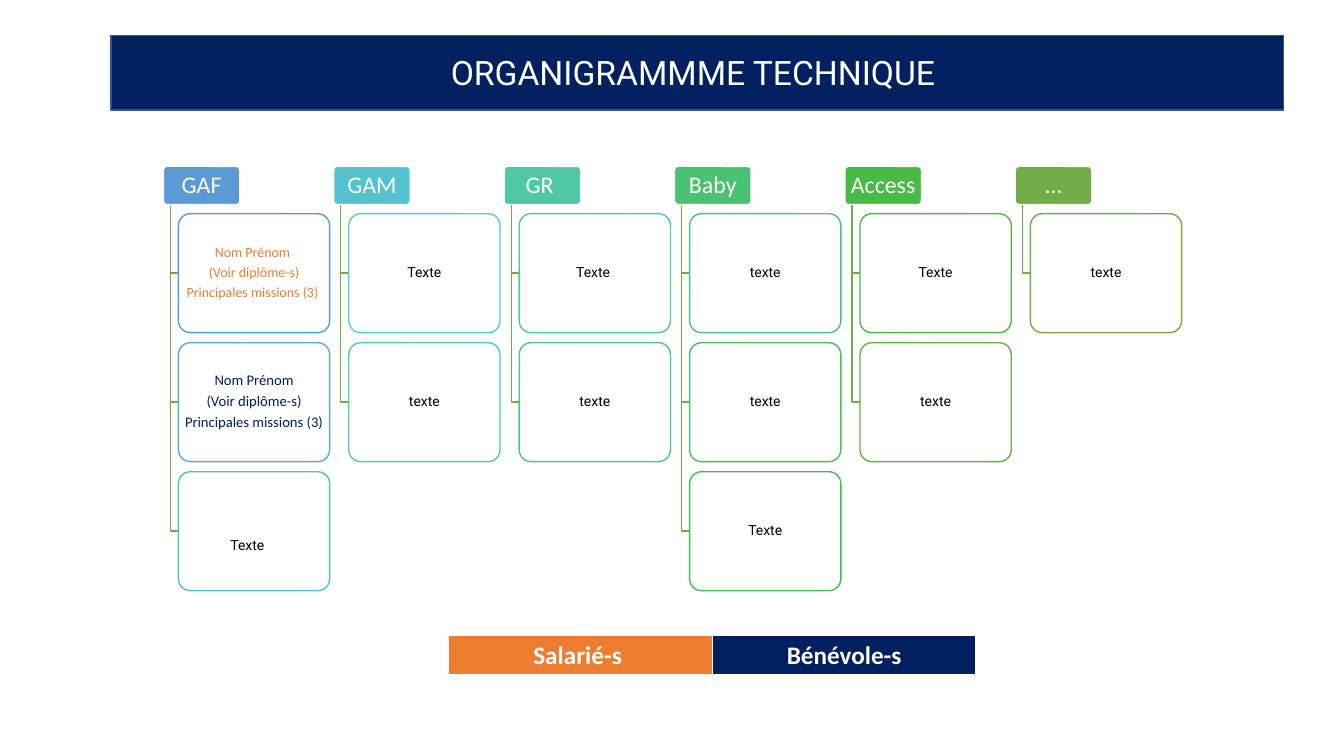
from lxml import etree
from pptx import Presentation
from pptx.dml.color import RGBColor
from pptx.enum.shapes import MSO_SHAPE
from pptx.enum.text import MSO_ANCHOR, PP_ALIGN
from pptx.oxml.ns import qn
from pptx.util import Emu, Pt

RECTANGLE = MSO_SHAPE.RECTANGLE
ROUNDED = MSO_SHAPE.ROUNDED_RECTANGLE
MIDDLE = MSO_ANCHOR.MIDDLE
CENTER = PP_ALIGN.CENTER
SCALE = 9144

WHITE, BLACK, NAVY, ORANGE, GREEN = "FFFFFF", "000000", "002060", "ED7D31", "70AD47"
HEAD_WIDTH, HEAD_HEIGHT = 76, 38
CARD_WIDTH, CARD_HEIGHT = 150, 118
CARD_INDENT, CARD_TOP, CARD_PITCH = 15, 47, 128
STEM_INDENT = 7
COLUMN_PITCH = 169
INSET = 2
PERSON_LINES = ["(Voir diplôme-s)", "Principales missions (3) "]
EMPLOYEE = {"lines": ["Nom Prénom ", *PERSON_LINES], "font": "Calibri", "color": ORANGE}
VOLUNTEER = {"lines": ["Nom Prénom", *PERSON_LINES], "font": "Calibri", "color": NAVY, "size": 10.5}
UPPER, LOWER, SPACED = {"lines": ["Texte"]}, {"lines": ["texte"]}, {"lines": ["Texte "]}
TALL = {"lines": ["Texte"], "tail_size": 42}

COLUMNS = [
    ("GAF", "5B9BD5", [("5B9BD5", EMPLOYEE), ("59ACD2", VOLUNTEER), ("56BCD0", TALL)]),
    ("GAM", "55C3CF", [("54CCCD", UPPER), ("52CAB8", LOWER)]),
    ("GR ", "50C8A7", [("4FC8A3", SPACED), ("4DC58D", LOWER)]),
    ("Baby", "4BC174", [("4BC278", LOWER), ("49BF64", LOWER), ("48BB4F", UPPER)]),
    ("Access", "4ABA46", [("50B846", UPPER), ("61B247", LOWER)]),
    ("…", GREEN, [(GREEN, LOWER)]),
]


def px(length):
    """Turn a length in px into EMU."""
    return Emu(length * SCALE)


def rgb(value):
    """Turn a hex string into a colour."""
    return RGBColor.from_string(value)


def add_span(para, text, font, size, color, bold=False):
    """Add one formatted run to a paragraph."""
    span = para.add_run()
    span.text = text
    span.font.name = font
    span.font.size = Pt(size)
    span.font.bold = bold
    span.font.color.rgb = rgb(color)


def write(frame, lines, font="Roboto", size=10, color=BLACK, bold=False,
          tight=False, tail_size=None):
    """Fill a text frame with centred paragraphs."""
    frame.word_wrap = True
    frame.vertical_anchor = MIDDLE
    for index, line in enumerate(lines):
        para = frame.add_paragraph() if index else frame.paragraphs[0]
        para.alignment = CENTER
        if tight:
            para.line_spacing = 0.9
            para.space_after = Pt(size * 0.35)
        add_span(para, line, font, size, color, bold)
        if tail_size:
            add_span(para, " ", "Calibri", tail_size, color)


def add_block(page, box, kind, fill, line):
    """Draw a filled and outlined shape in the given box."""
    block = page.shapes.add_shape(kind, *map(px, box))
    block.shadow.inherit = False
    block.fill.solid()
    block.fill.fore_color.rgb = rgb(fill)
    block.line.color.rgb = rgb(line)
    block.line.width = Pt(1)
    if kind == ROUNDED:
        block.adjustments[0] = 0.1
        frame = block.text_frame
        frame.margin_left = frame.margin_right = px(INSET)
        frame.margin_top = frame.margin_bottom = px(INSET)
    return block


def add_title(page, box):
    """Draw the title banner."""
    banner = add_block(page, box, RECTANGLE, NAVY, "325491")
    write(banner.text_frame, ["ORGANIGRAMMME TECHNIQUE "], size=24, color=WHITE)


def add_branch(page, left, top, right, bottom):
    """Draw the elbow from a heading down to a card."""
    builder = page.shapes.build_freeform(px(left), px(top))
    builder.add_line_segments([(px(left), px(bottom)), (px(right), px(bottom))], close=False)
    branch = builder.convert_to_shape()
    branch.shadow.inherit = False
    branch.fill.background()
    branch.line.color.rgb = rgb(GREEN)
    branch.line.width = Pt(1)


def add_card(page, box, line, content):
    """Draw one card with a slightly transparent white fill."""
    card = add_block(page, box, ROUNDED, WHITE, line)
    tone = card.fill._xPr.find(qn("a:solidFill"))[0]
    etree.SubElement(tone, qn("a:alpha"), val="90000")
    write(card.text_frame, tight=True, **content)


def add_column(page, left, top, name, fill, cards):
    """Draw a heading and the cards that hang below it."""
    heading = add_block(page, (left, top, HEAD_WIDTH, HEAD_HEIGHT), ROUNDED, fill, WHITE)
    write(heading.text_frame, [name], font="Calibri", size=17, color=WHITE, tight=True)
    card_left = left + CARD_INDENT
    for row, (line, content) in enumerate(cards):
        card_top = top + CARD_TOP + row * CARD_PITCH
        add_branch(page, left + STEM_INDENT, top + HEAD_HEIGHT,
                   card_left, card_top + CARD_HEIGHT // 2)
        add_card(page, (card_left, card_top, CARD_WIDTH, CARD_HEIGHT), line, content)


def add_chart_columns(page, left, top):
    """Place all columns at an equal pitch."""
    for index, column in enumerate(COLUMNS):
        add_column(page, left + index * COLUMN_PITCH, top, *column)


def add_border(cell, side, width):
    """Give one side of a table cell a white border."""
    edge = etree.SubElement(cell._tc.get_or_add_tcPr(), qn(f"a:{side}"), w=str(Pt(width)))
    fill = etree.SubElement(edge, qn("a:solidFill"))
    etree.SubElement(fill, qn("a:srgbClr"), val=WHITE)


def add_legend(page, box):
    """Draw the colour key as a table of two cells."""
    table = page.shapes.add_table(1, 2, *map(px, box)).table
    table.first_row = table.horz_banding = False
    for cell, text, fill in zip(table.iter_cells(), ["Salarié-s ", "Bénévole-s"], [ORANGE, NAVY]):
        for side, width in (("lnL", 1), ("lnR", 1), ("lnT", 1), ("lnB", 3)):
            add_border(cell, side, width)
        cell.fill.solid()
        cell.fill.fore_color.rgb = rgb(fill)
        cell.vertical_anchor = MIDDLE
        write(cell.text_frame, [text], font="Calibri", size=18, color=WHITE, bold=True)


def main():
    """Build the slide and save it."""
    deck = Presentation()
    deck.slide_width, deck.slide_height = px(1333), px(750)
    page = deck.slides.add_slide(deck.slide_layouts[6])
    add_title(page, (110, 35, 1163, 74))
    add_chart_columns(page, 162, 165)
    add_legend(page, (445, 630, 523, 41))
    deck.save("out.pptx")


if __name__ == "__main__":
    main()
